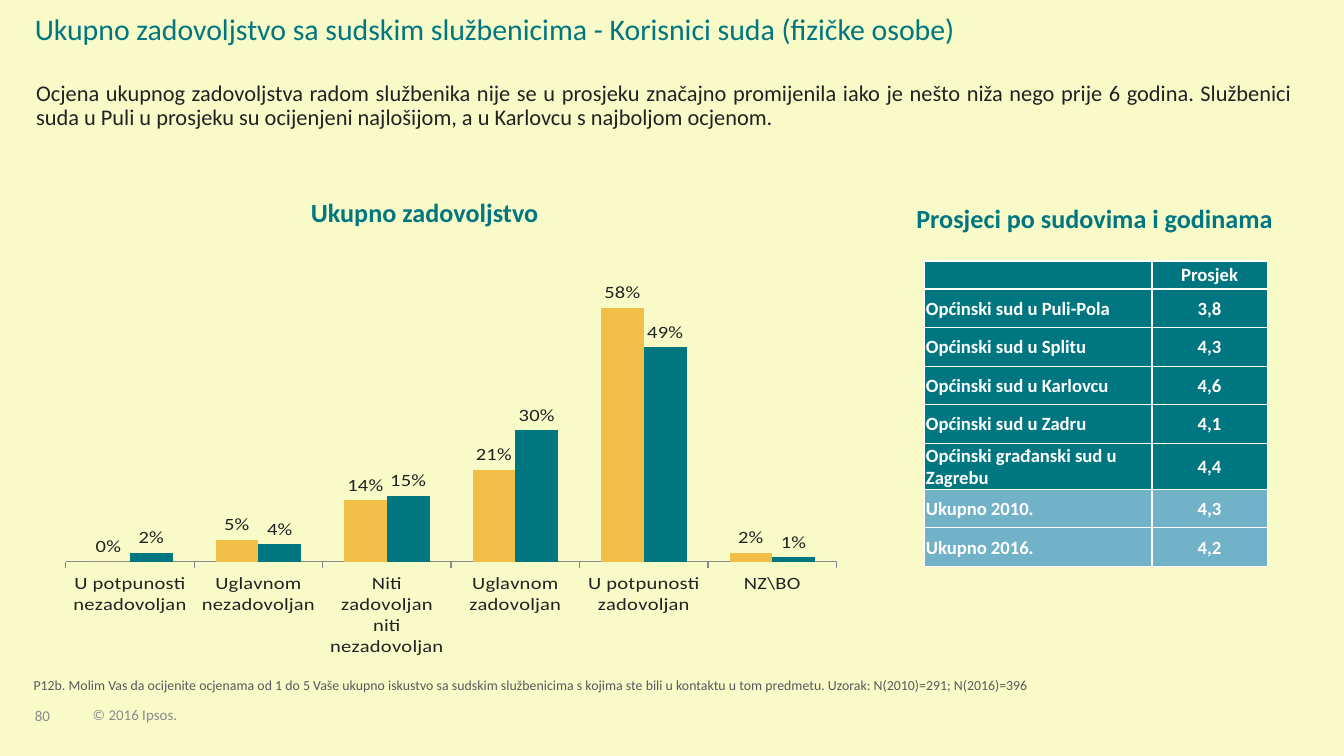
from lxml.etree import SubElement as Sub
from pptx import Presentation
from pptx.chart.data import CategoryChartData as Data
from pptx.dml.color import RGBColor as RGB
from pptx.enum.chart import XL_CHART_TYPE as Kind, XL_LABEL_POSITION as Spot, XL_TICK_MARK as Tick
from pptx.enum.text import MSO_ANCHOR as Anchor, PP_ALIGN as Align
from pptx.oxml.ns import qn
from pptx.util import Inches, Pt

HUES = {"back": "F8FAC8", "teal": "007681", "gold": "F1BE48", "sky": "71B2C9",
        "ink": "222223", "gray": "888B8D", "dark": "58595B", "white": "FFFFFF"}
PERCENT = "#,##0%"


def hue(name):
    return RGB.from_string(HUES[name])


class Deck:
    """Slide of 16 by 9 on a grid of 100 square columns, with its style."""

    def __init__(self, face="Calibri"):
        self.face = face
        self.prs = Presentation()
        wide = Inches(10)
        self.prs.slide_width, self.prs.slide_height = wide, wide * 9 // 16
        self.unit = wide / 100
        self.slide = self.prs.slides.add_slide(self.prs.slide_layouts[6])
        fill = self.slide.background.fill
        fill.solid()
        fill.fore_color.rgb = hue("back")

    def place(self, *area):
        return [round(n * self.unit) for n in area]

    def style(self, font, size, color, bold=False):
        font.name, font.size, font.bold = self.face, Pt(size), bold
        font.color.rgb = hue(color)

    def text(self, words, area, size, color, bold=False, align=Align.LEFT,
             anchor=Anchor.TOP, pad=(0, 0), space=0.9):
        frame = self.slide.shapes.add_textbox(*self.place(*area)).text_frame
        frame.word_wrap, frame.vertical_anchor = True, anchor
        frame.margin_left = frame.margin_right = Inches(pad[0])
        frame.margin_top = frame.margin_bottom = Inches(pad[1])
        para = frame.paragraphs[0]
        para.text, para.alignment, para.line_spacing = words, align, space
        self.style(para.font, size, color, bold)

    def chart(self, area, names, rows, plot, top):
        data = Data(number_format=PERCENT)
        data.categories = names
        for name, vals, _ in rows:
            data.add_series(name, vals)
        chart = self.slide.shapes.add_chart(Kind.COLUMN_CLUSTERED, *self.place(*area), data).chart
        chart.has_legend = chart.has_title = False
        self.style(chart.font, 18, "ink")
        axis = chart.value_axis
        axis.visible = axis.has_major_gridlines = False
        axis.minimum_scale, axis.maximum_scale = 0, top
        axis = chart.category_axis
        axis.major_tick_mark, axis.minor_tick_mark = Tick.OUTSIDE, Tick.NONE
        axis.format.line.color.rgb = hue("gray")
        self.style(axis.tick_labels.font, 11, "ink")
        bars = chart.plots[0]
        bars.gap_width, bars.overlap, bars.vary_by_categories = 100, 0, False
        for line, (_, _, color) in zip(bars.series, rows):
            line.format.fill.solid()
            line.format.fill.fore_color.rgb = hue(color)
            tags = line.data_labels
            tags.show_value, tags.position = True, Spot.OUTSIDE_END
            tags.number_format, tags.number_format_is_linked = PERCENT, False
            self.style(tags.font, 11, "ink")
        field = bars._element.getparent()
        old = field.find(qn("c:layout"))
        if old is not None:
            field.remove(old)
        frame = Sub(field, qn("c:layout"))
        field.insert(0, frame)
        box = Sub(frame, qn("c:manualLayout"))
        marks = {"layoutTarget": "inner", "xMode": "edge", "yMode": "edge"}
        for key, val in {**marks, **dict(zip("xywh", plot))}.items():
            Sub(box, qn(f"c:{key}")).set("val", str(val))

    def edge(self, cell, sides):
        props = cell._tc.get_or_add_tcPr()
        for side, width in sides.items():
            line = Sub(props, qn(f"a:ln{side}"), w=str(Pt(width)))
            Sub(Sub(line, qn("a:solidFill")), qn("a:srgbClr"), val=HUES["white"])

    def table(self, area, rows, wide, high, pale):
        table = self.slide.shapes.add_table(len(rows), len(wide), *self.place(*area)).table
        table.horz_banding = False
        for col, w in zip(table.columns, self.place(*wide)):
            col.width = w
        for r, (row, h) in enumerate(zip(rows, self.place(*high))):
            table.rows[r].height = h
            for c, words in enumerate(row):
                cell = table.cell(r, c)
                sides = {"L": 1} if c else {}
                sides |= {"R": 1, "T": 1.5 if r < 2 else 0.5, "B": 0.5 if r else 1.5}
                self.edge(cell, sides)
                cell.fill.solid()
                cell.fill.fore_color.rgb = hue("sky" if r >= pale else "teal")
                cell.vertical_anchor = Anchor.MIDDLE
                cell.margin_left = cell.margin_right = cell.margin_top = Inches(0.01)
                cell.margin_bottom = 0
                para = cell.text_frame.paragraphs[0]
                para.alignment = Align.CENTER if c else Align.LEFT
                if words:
                    para.text = words
                else:
                    Sub(para._p, qn("a:endParaRPr"), sz="1000")
                self.style(para.font, 10, "white", True)


def main():
    deck = Deck()
    low = {"anchor": Anchor.BOTTOM, "space": 0.85}
    deck.text("80", (2.6, 51.3, 3.4, 2.6), 8, "gray", **low)
    deck.text("© 2016 Ipsos.", (6.9, 52, 7.6, 1.8), 8, "gray", **low)
    deck.text("P12b. Molim Vas da ocijenite ocjenama od 1 do 5 Vaše ukupno iskustvo sa sudskim "
              "službenicima s kojima ste bili u kontaktu u tom predmetu. "
              "Uzorak: N(2010)=291; N(2016)=396",
              (2.5, 49.6, 79.3, 2), 7.4, "dark", anchor=Anchor.BOTTOM, space=1)
    deck.text("Ocjena ukupnog zadovoljstva radom službenika nije se u prosjeku značajno "
              "promijenila iako je nešto niža nego prije 6 godina. Službenici suda u Puli u "
              "prosjeku su ocijenjeni najlošijom, a u Karlovcu s najboljom ocjenom.",
              (1.7, 5.6, 95.5, 4.6), 12, "ink", align=Align.JUSTIFY, pad=(0.1, 0.05))
    deck.text("Ukupno zadovoljstvo sa sudskim službenicima - Korisnici suda (fizičke osobe)",
              (2.6, 1.1, 77.6, 2.4), 16, "teal")
    head = {"size": 14, "color": "teal", "bold": True, "align": Align.CENTER}
    deck.text("Ukupno zadovoljstvo", (14.3, 14.9, 34.6, 2.7), **head)
    deck.chart((2.5, 19, 59.8, 29.9),
               ["U potpunosti nezadovoljan", "Uglavnom nezadovoljan",
                "Niti zadovoljan niti nezadovoljan", "Uglavnom zadovoljan",
                "U potpunosti zadovoljan", "NZ\\BO"],
               [("Series 1", (0, 0.05, 0.14, 0.21, 0.58, 0.02), "gold"),
                ("Series 2", (0.02, 0.04, 0.15, 0.3, 0.49, 0.01), "teal")],
               (0.04, 0, 0.96, 0.91), 0.7)
    deck.table((68.8, 19.4, 25.5, 22.7),
               [("", "Prosjek"), ("Općinski sud u Puli-Pola", "3,8"),
                ("Općinski sud u Splitu", "4,3"), ("Općinski sud u Karlovcu", "4,6"),
                ("Općinski sud u Zadru", "4,1"), ("Općinski građanski sud u Zagrebu", "4,4"),
                ("Ukupno 2010.", "4,3"), ("Ukupno 2016.", "4,2")],
               (16.9, 8.6), [2.1] + [2.87] * 7, 6)
    deck.text("Prosjeci po sudovima i godinama", (67.5, 15.3, 27.9, 2.8), **head)
    deck.prs.save("out.pptx")


if __name__ == "__main__":
    main()
